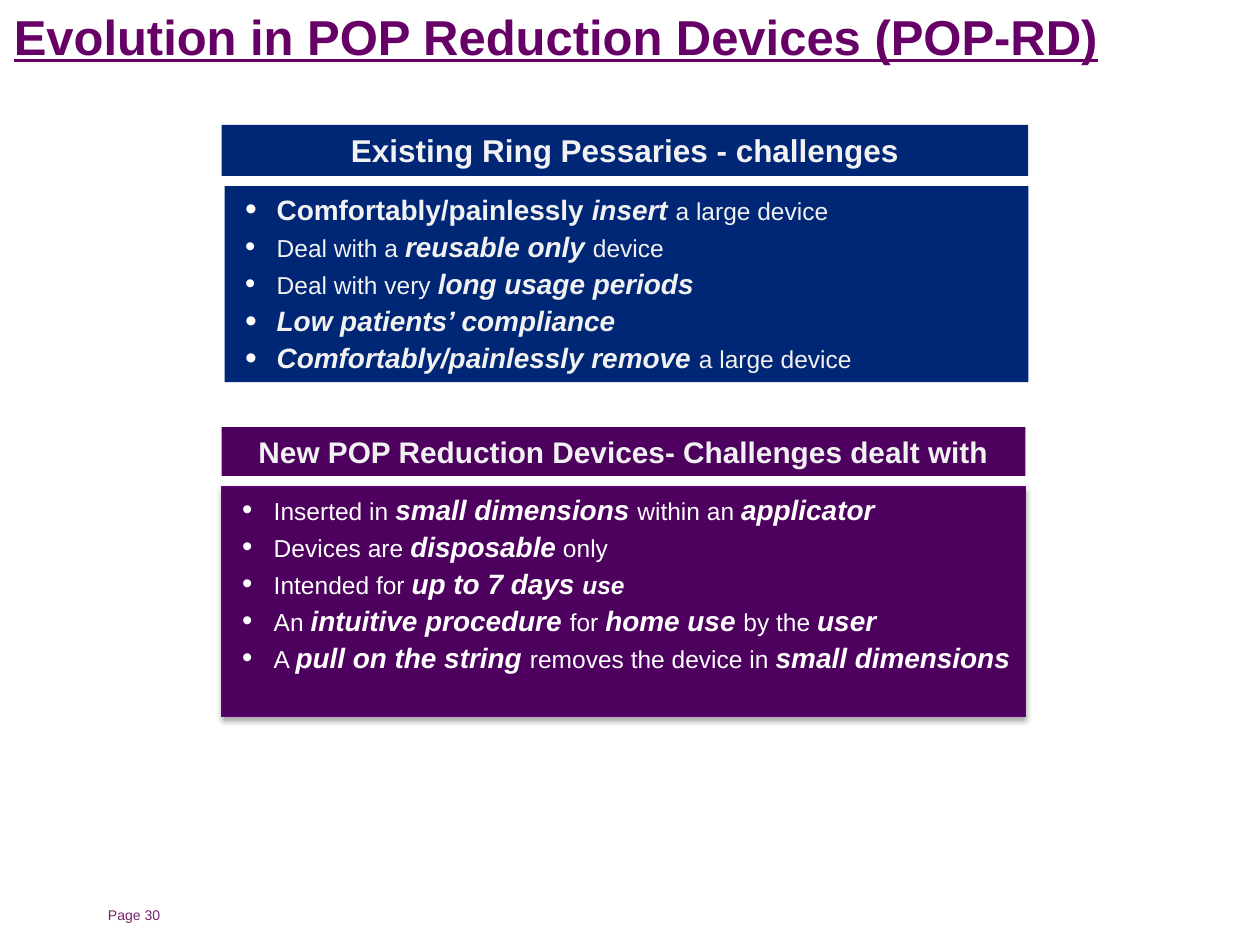
"""Build the slide comparing existing ring pessaries with new POP reduction devices."""
from lxml import etree
from pptx import Presentation
from pptx.dml.color import RGBColor
from pptx.enum import text
from pptx.oxml import ns
from pptx.util import Pt

FONT = "Arial"
COLORS = {
    "title": "660066", "page": "77226C", "navy": "002776", "purple": "4E005F",
    "border": "66007C", "pale": "F2F2F2", "white": "FFFFFF", "shadow": "000000",
}
STYLES = {
    "plain": (14, False, False),
    "key": (16, True, True),
    "bold": (16, True, False),
    "small_key": (14, True, True),
}
EXISTING = [
    [("Comfortably/painlessly ", "bold"), ("insert ", "key"), ("a large device", "plain")],
    [("Deal with a ", "plain"), ("reusable only ", "key"), ("device", "plain")],
    [("Deal with very ", "plain"), ("long usage periods", "key")],
    [("Low patients’ compliance", "key")],
    [("Comfortably/painlessly remove ", "key"), ("a large device", "plain")],
]
NEW = [
    [("Inserted in ", "plain"), ("small dimensions ", "key"), ("within an ", "plain"),
     ("applicator", "key")],
    [("Devices are ", "plain"), ("disposable", "key"), (" only", "plain")],
    [("Intended for ", "plain"), ("up to 7 days ", "key"), ("use", "small_key")],
    [("An ", "plain"), ("intuitive procedure ", "key"), ("for ", "plain"),
     ("home use ", "key"), ("by the ", "plain"), ("user", "key")],
    [("A ", "plain"), ("pull on the string ", "key"), ("removes the device in ", "plain"),
     ("small dimensions", "key")],
]


def rgb(name):
    return RGBColor.from_string(COLORS[name])


def add_child(parent, tag, **attributes):
    return etree.SubElement(parent, ns.qn(tag), attributes)


def place(box, bounds, anchor=text.MSO_ANCHOR.TOP, fill=None):
    box.left, box.top, box.width, box.height = (Pt(length) for length in bounds)
    frame = box.text_frame
    frame.word_wrap = True
    frame.auto_size = text.MSO_AUTO_SIZE.NONE
    frame.vertical_anchor = anchor
    if fill:
        box.fill.solid()
        box.fill.fore_color.rgb = rgb(fill)
    return frame


def add_span(para, words, color, size, bold=False, italic=False):
    span = para.add_run()
    span.text = words
    font = span.font
    font.name, font.size, font.bold, font.italic = FONT, Pt(size), bold, italic
    font.color.rgb = rgb(color)
    return span


def write_line(frame, words, color, size, align, bold=True):
    para = frame.paragraphs[0]
    para.alignment = align
    para.space_before = Pt(0)
    return add_span(para, words, color, size, bold)


def format_bullet(para):
    para.space_before = para.space_after = Pt(1)
    props = para._p.get_or_add_pPr()
    props.set("marL", str(Pt(22.5)))
    props.set("indent", str(Pt(-18)))
    add_child(add_child(props, "a:buClr"), "a:srgbClr", val=COLORS["white"])
    add_child(props, "a:buSzPct", val="120000")
    add_child(props, "a:buFont", typeface=FONT)
    add_child(props, "a:buChar", char="•")


def write_bullets(frame, items, color):
    for number, item in enumerate(items):
        para = frame.add_paragraph() if number else frame.paragraphs[0]
        format_bullet(para)
        for words, style in item:
            add_span(para, words, color, *STYLES[style])


def frame_with_shadow(box):
    box.line.color.rgb = rgb("border")
    box.line.width = Pt(0.75)
    effects = add_child(box._element.spPr, "a:effectLst")
    shadow = add_child(effects, "a:outerShdw", blurRad=str(Pt(3.1)), dist=str(Pt(1.8)),
                       dir="5400000", rotWithShape="0")
    add_child(add_child(shadow, "a:srgbClr", val=COLORS["shadow"]), "a:alpha", val="35000")


def write_heading(box, words, bounds, fill, size):
    frame = place(box, bounds, fill=fill)
    write_line(frame, words, "pale", size, text.PP_ALIGN.CENTER)


def write_list(box, items, bounds, fill, color):
    write_bullets(place(box, bounds, fill=fill), items, color)


def add_page_label(page):
    box = page.shapes.add_textbox(0, 0, 0, 0)
    frame = place(box, (45.4, 508.3, 62.6, 28.8), text.MSO_ANCHOR.MIDDLE)
    write_line(frame, "Page 30", "page", 8, text.PP_ALIGN.CENTER, bold=False)


def main():
    deck = Presentation()
    deck.slide_width, deck.slide_height = Pt(720), Pt(540)
    page = deck.slides.add_slide(deck.slide_layouts.get_by_name("Comparison"))
    title, old_heading, old_list, new_heading, new_list = page.placeholders

    frame = place(title, (0.7, 0, 654.5, 41))
    span = write_line(frame, "Evolution in POP Reduction Devices (POP-RD)", "title", 28,
                      text.PP_ALIGN.LEFT)
    span.font.underline = True

    write_heading(old_heading, "Existing Ring Pessaries - challenges",
                  (126.7, 71.4, 460.8, 29.1), "navy", 18)
    write_list(old_list, EXISTING, (128.4, 106.4, 459.2, 112), "navy", "pale")
    write_heading(new_heading, "New POP Reduction Devices- Challenges dealt with",
                  (126.7, 244, 459.2, 28), "purple", 17)
    write_list(new_list, NEW, (126.7, 278, 459.2, 131.4), "purple", "white")
    frame_with_shadow(new_list)
    add_page_label(page)
    deck.save("out.pptx")


if __name__ == "__main__":
    main()
